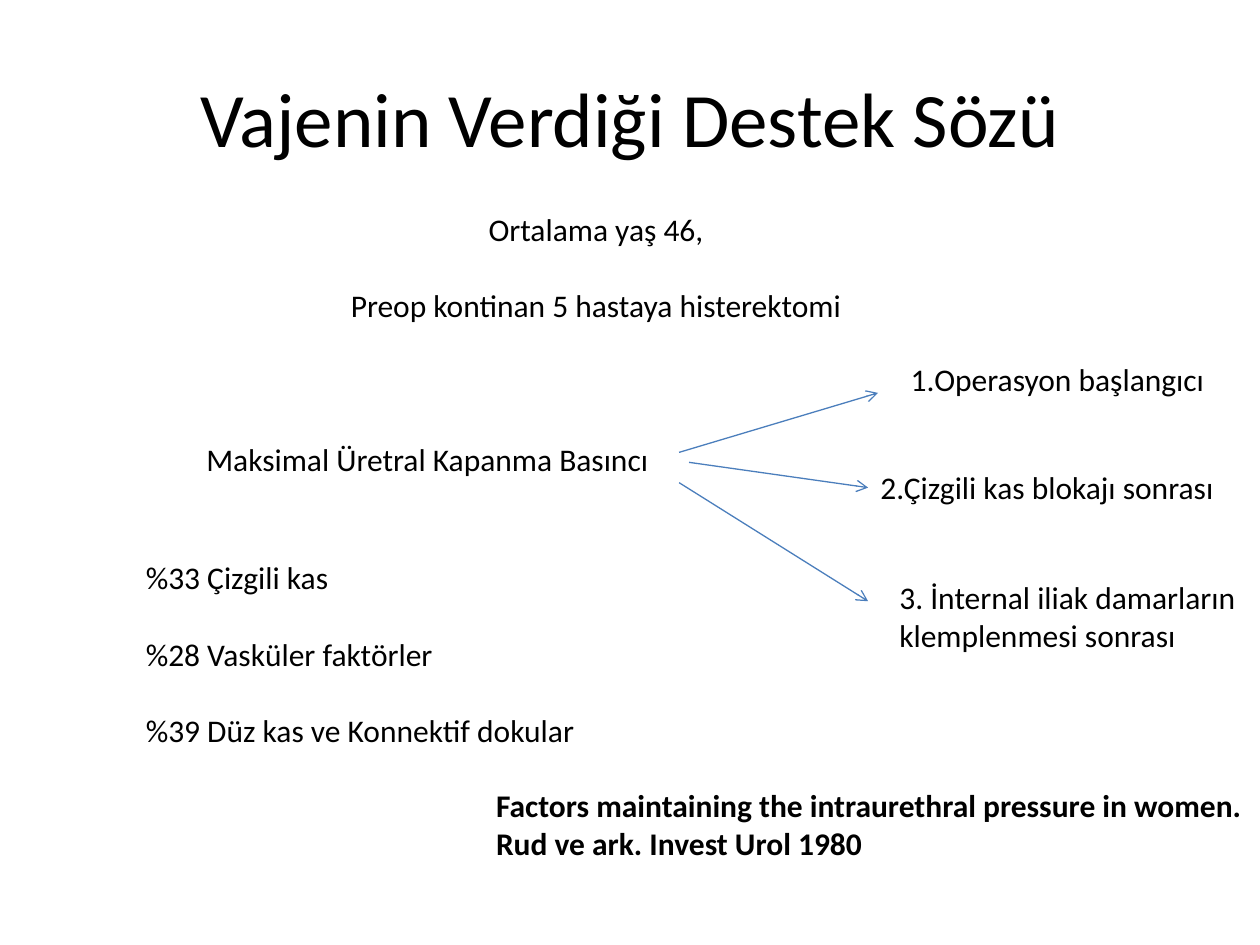
from lxml.etree import SubElement as Sub
from pptx import Presentation
from pptx.dml.color import RGBColor
from pptx.enum.shapes import MSO_CONNECTOR as Conn
from pptx.enum.text import MSO_ANCHOR as Anchor, PP_ALIGN as Align
from pptx.oxml.ns import qn
from pptx.util import Cm, Pt

BLACK = RGBColor(0, 0, 0)
BLUE = RGBColor(0x4B, 0x7E, 0xBC)
BODY = {"name": "Calibri", "size": Pt(18), "bold": False}
HEAD = BODY | {"size": Pt(44)}
CITE = BODY | {"bold": True}
LEFT, MID = Align.LEFT, Align.CENTER


def style(para, look, align):
    para.alignment = align
    for key, val in look.items():
        setattr(para.font, key, val)
    para.font.color.rgb = BLACK


deck = Presentation()
deck.slide_width, deck.slide_height = Cm(25.4), Cm(19.05)
slide = deck.slides.add_slide(deck.slide_layouts[5])

title = slide.shapes.title
title.left, title.top, title.width, title.height = map(Cm, (1.27, 0.76, 22.86, 3.18))
title.text_frame.text = "Vajenin Verdiği Destek Sözü"
title.text_frame.vertical_anchor = Anchor.MIDDLE
style(title.text_frame.paragraphs[0], HEAD, MID)

texts = [
    ((9.75, 15.72, 15.65, 3.33), True, CITE, [
        ("Factors maintaining the intraurethral pressure in women.", LEFT, 0),
        ("Rud ve ark. Invest Urol 1980", LEFT, 0)]),
    ((3.91, 4.11, 16.21, 8.71), True, BODY, [
        ("Ortalama yaş 46,", MID, 0),
        ("Preop kontinan 5 hastaya histerektomi", MID, 22),
        ("Maksimal Üretral Kapanma Basıncı", LEFT, 66)]),
    ((18.11, 7.14, 6.48, 1.03), False, BODY, [
        ("1.Operasyon başlangıcı", LEFT, 0)]),
    ((17.5, 9.32, 7.29, 1.03), False, BODY, [
        ("2.Çizgili kas blokajı sonrası", LEFT, 0)]),
    ((17.88, 11.53, 7.52, 1.8), False, BODY, [
        ("3. İnternal iliak damarların", LEFT, 0),
        ("klemplenmesi sonrası", LEFT, 0)]),
    ((2.69, 11.13, 9.55, 4.11), True, BODY, [
        ("%33 Çizgili kas", LEFT, 0),
        ("%28 Vasküler faktörler", LEFT, 22),
        ("%39 Düz kas ve Konnektif dokular", LEFT, 22)]),
]
for place, wrap, look, lines in texts:
    frame = slide.shapes.add_textbox(*map(Cm, place)).text_frame
    frame.word_wrap = wrap
    frame.text = "\n".join(line[0] for line in lines)
    for para, (_, align, gap) in zip(frame.paragraphs, lines):
        style(para, look, align)
        para.space_before = Pt(gap)

arrows = [
    (13.69, 9.12, 17.7, 7.92),
    (13.89, 9.32, 17.5, 9.83),
    (13.69, 9.73, 17.5, 12.12),
]
for ends in arrows:
    arrow = slide.shapes.add_connector(Conn.STRAIGHT, *map(Cm, ends))
    arrow.line.color.rgb = BLUE
    arrow.line.width = Pt(0.75)
    Sub(arrow.line._get_or_add_ln(), qn("a:tailEnd"), type="arrow")
    Sub(arrow._element.spPr, qn("a:effectLst"))

deck.save("out.pptx")
